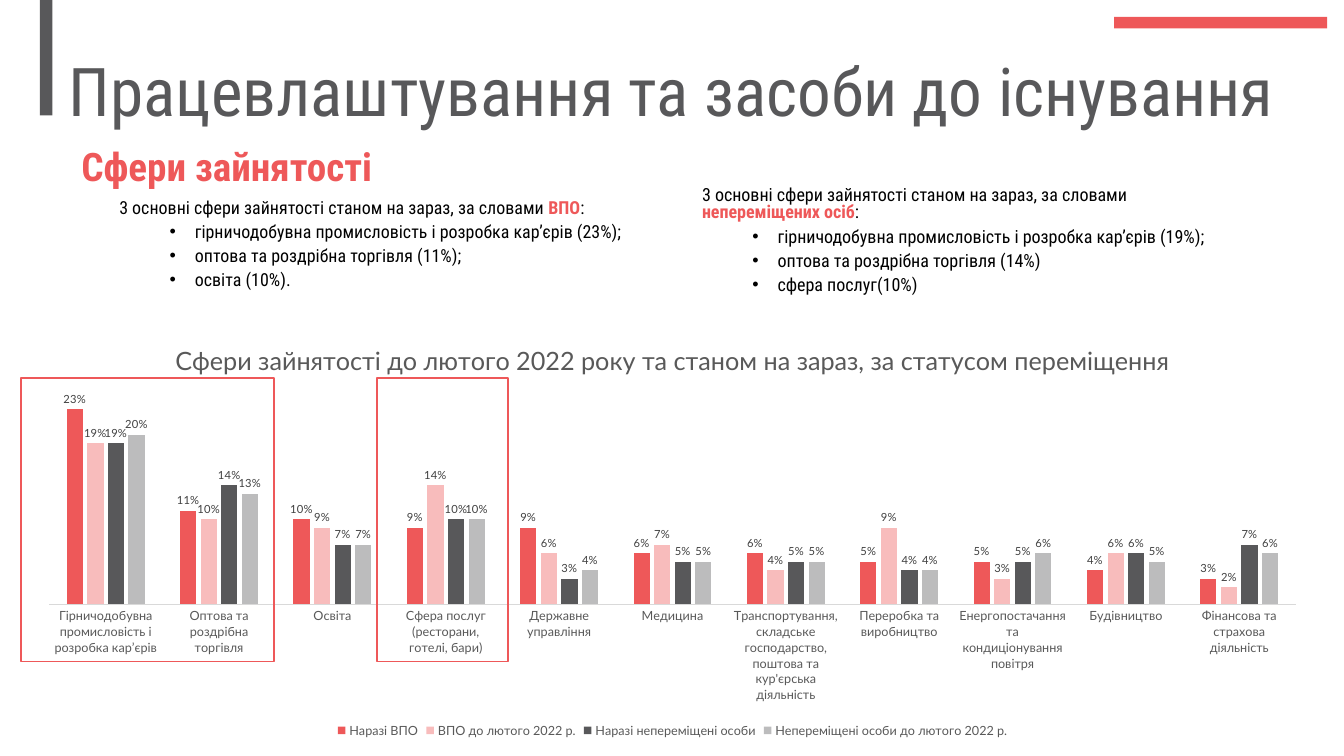
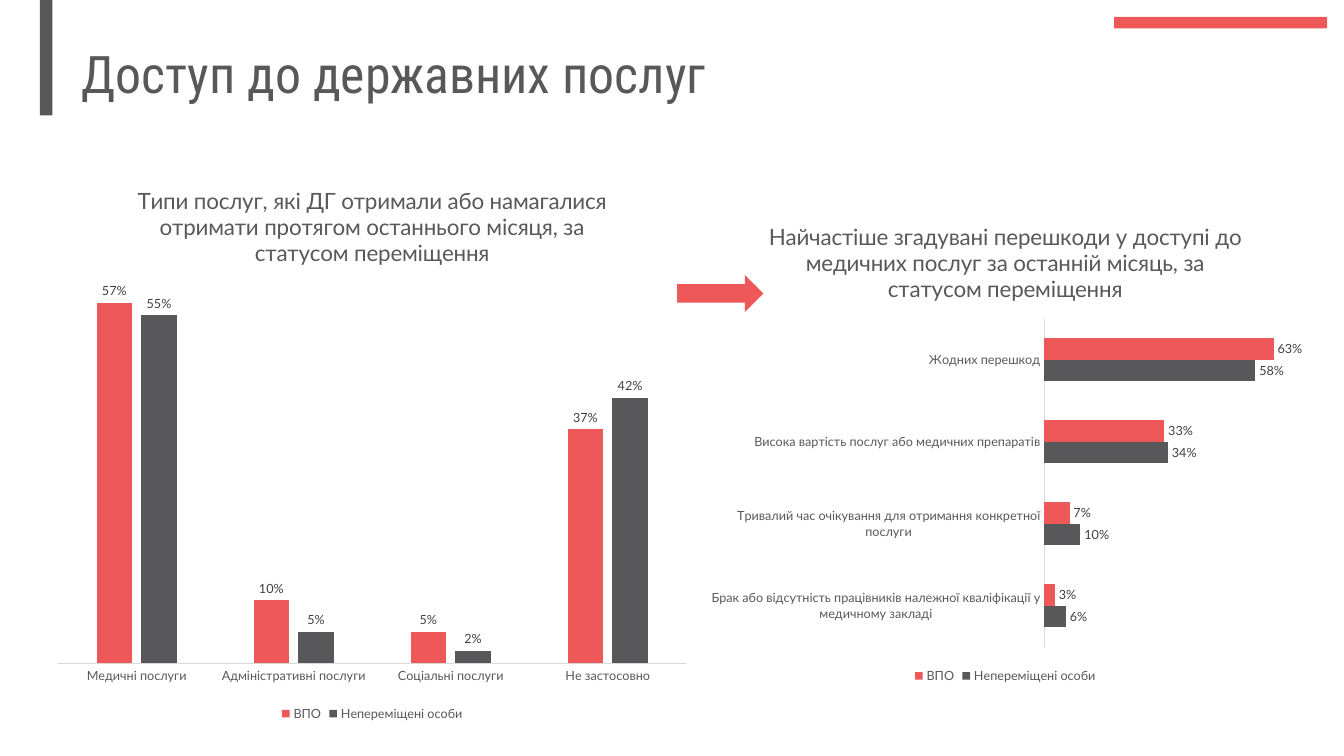
"""Builds two slides on employment and on access to public services."""
from lxml import etree
from pptx import Presentation
from pptx import util as u
from pptx.chart.data import CategoryChartData
from pptx.dml.color import RGBColor
from pptx.enum import chart as ch, shapes, text
from pptx.oxml import ns

RED, PINK, DARK, SILVER = "EE5859", "F8BCBC", "58585A", "BCBCBD"
BLACK, GREY, LABEL, RULE = "000000", "595959", "404040", "D9D9D9"
HEAD, CHART = "Roboto Condensed", "Lato"
COLUMN, BAR = ch.XL_CHART_TYPE.COLUMN_CLUSTERED, ch.XL_CHART_TYPE.BAR_CLUSTERED
rgb = RGBColor.from_string


def px(*lengths):
    """Turn pixels, 96 to the inch, into EMU."""
    return [u.Emu(n * 9525) for n in lengths]


def style(font, name, size, color, bold=False):
    """Set the face, size, colour and weight of a font."""
    font.name, font.size, font.bold = name, u.Pt(size), bold
    font.color.rgb = rgb(color)


prs = Presentation()
prs.slide_width, prs.slide_height = px(1280, 720)
jobs = prs.slides.add_slide(prs.slide_layouts[3])
services = prs.slides.add_slide(prs.slide_layouts[5])

bands = [((1061, 16, 203, 11), RED), ((38, 0, 12, 110), DARK)]
for i, (box, color) in enumerate(bands):
    sp = jobs.shapes.add_shape(shapes.MSO_SHAPE.RECTANGLE, *px(*box))
    sp.shadow.inherit = False
    sp.fill.solid()
    sp.fill.fore_color.rgb = rgb(color)
    sp.line.fill.background()
    sp.element.nvSpPr.cNvPr.id = 20 + i
    prs.slide_master.shapes.element.append(sp.element)

titles = [
    (jobs, (56, 58, 1205, 64), "Працевлаштування та засоби до існування", 48),
    (services, (68, 41, 815, 64), "Доступ до державних послуг", 37),
]
for s, box, words, size in titles:
    sp = s.shapes.title
    sp.left, sp.top, sp.width, sp.height = px(*box)
    tf = sp.text_frame
    tf.auto_size = text.MSO_AUTO_SIZE.NONE
    tf.vertical_anchor = text.MSO_ANCHOR.MIDDLE
    p = tf.paragraphs[0]
    p.alignment, p.line_spacing = text.PP_ALIGN.LEFT, 0.9
    r = p.add_run()
    r.text = words
    style(r.font, HEAD, size, DARK)

tf = jobs.shapes.add_textbox(*px(68, 131, 1165, 55)).text_frame
tf.word_wrap = True
r = tf.paragraphs[0].add_run()
r.text = "Сфери зайнятості"
style(r.font, HEAD, 28, RED, True)

lists = [
    ((104, 186, 537, 123), 12.8, "ВПО", [
        "гірничодобувна промисловість і розробка кар’єрів (23%);",
        "оптова та роздрібна торгівля (11%);",
        "освіта (10%).",
    ]),
    ((659, 174, 537, 134), 12.9, "непереміщених осіб", [
        "гірничодобувна промисловість і розробка кар’єрів (19%);",
        "оптова та роздрібна торгівля (14%)",
        "сфера послуг(10%)",
    ]),
]
for sp, (box, size, group, items) in zip(list(jobs.placeholders)[1:], lists):
    sp.left, sp.top, sp.width, sp.height = px(*box)
    tf = sp.text_frame
    tf.auto_size = text.MSO_AUTO_SIZE.NONE
    intro = [("3 основні сфери зайнятості станом на зараз, за словами ", BLACK),
             (group, RED), (":", BLACK)]
    for i, runs in enumerate([intro] + [[(item, BLACK)] for item in items]):
        p = tf.add_paragraph() if i else tf.paragraphs[0]
        p.level = 1 if i else 0
        p.line_spacing, p.space_before = 0.8, u.Pt(5 if i else 10)
        pPr = p._p.get_or_add_pPr()
        margin, indent = px(72, -24) if i else (0, 0)
        pPr.set("marL", str(margin))
        pPr.set("indent", str(indent))
        bullet = etree.SubElement(pPr, ns.qn("a:buChar" if i else "a:buNone"))
        if i:
            bullet.set("char", "•")
        for words, color in runs:
            r = p.add_run()
            r.text = words
            style(r.font, HEAD, size, color, color == RED)

sp = services.shapes.add_shape(shapes.MSO_SHAPE.RIGHT_ARROW, *px(645, 262, 82, 35))
sp.shadow.inherit = False
sp.fill.solid()
sp.fill.fore_color.rgb = rgb(RED)
sp.line.fill.background()

charts = [
    (jobs, COLUMN, (22, 309, 1237, 398), 18, 8, 219, -27,
     "Сфери зайнятості до лютого 2022 року та станом на зараз, за статусом переміщення",
     ["Гірничодобувна промисловість і розробка кар’єрів",
      "Оптова та роздрібна торгівля", "Освіта",
      "Сфера послуг (ресторани, готелі, бари)", "Державне управління", "Медицина",
      "Транспортування, складське господарство, поштова та кур'єрська діяльність",
      "Переробка та виробництво", "Енергопостачання та кондиціонування повітря",
      "Будівництво", "Фінансова та страхова діяльність"],
     [("Наразі ВПО", RED, (23, 11, 10, 9, 9, 6, 6, 5, 5, 4, 3)),
      ("ВПО до лютого 2022 р.", PINK, (19, 10, 9, 14, 6, 7, 4, 9, 3, 6, 2)),
      ("Наразі непереміщені особи", DARK, (19, 14, 7, 10, 3, 5, 5, 4, 5, 6, 7)),
      ("Непереміщені особи до лютого 2022 р.", SILVER,
       (20, 13, 7, 10, 4, 5, 5, 4, 6, 5, 6))]),
    (services, BAR, (666, 192, 583, 463), 16, 9, 182, 0,
     "Найчастіше згадувані перешкоди у доступі до медичних послуг "
     "за останній місяць, за статусом переміщення",
     ["Брак або відсутність працівників належної кваліфікації у медичному закладі",
      "Тривалий час очікування для отримання конкретної послуги",
      "Висока вартість послуг або медичних препаратів", "Жодних перешкод"],
     [("Непереміщені особи", DARK, (6, 10, 34, 58)),
      ("ВПО", RED, (3, 7, 33, 63))]),
    (services, COLUMN, (43, 156, 623, 535), 16, 9, 219, -27,
     "Типи послуг, які ДГ отримали або намагалися отримати "
     "протягом останнього місяця, за статусом переміщення",
     ["Медичні послуги", "Адміністративні послуги", "Соціальні послуги",
      "Не застосовно"],
     [("ВПО", RED, (57, 10, 5, 37)),
      ("Непереміщені особи", DARK, (55, 5, 2, 42))]),
]
for s, kind, box, size, label_size, gap, overlap, title, cats, rows in charts:
    data = CategoryChartData(number_format="0%")
    data.categories = cats
    for name, color, percents in rows:
        data.add_series(name, [n / 100 for n in percents])
    chart = s.shapes.add_chart(kind, *px(*box), data).chart
    style(chart.font, CHART, 10, BLACK)
    r = chart.chart_title.text_frame.paragraphs[0].add_run()
    r.text = title
    style(r.font, CHART, size, GREY)
    chart.has_legend = True
    chart.legend.position = ch.XL_LEGEND_POSITION.BOTTOM
    chart.legend.include_in_layout = False
    style(chart.legend.font, CHART, 9, GREY)
    chart.value_axis.visible = False
    chart.value_axis.has_major_gridlines = False
    axis = chart.category_axis
    axis.major_tick_mark = ch.XL_TICK_MARK.NONE
    axis.format.line.color.rgb = rgb(RULE)
    axis.format.line.width = u.Pt(0.75)
    style(axis.tick_labels.font, CHART, 9, GREY)
    plot = chart.plots[0]
    plot.gap_width, plot.overlap, plot.vary_by_categories = gap, overlap, False
    for series, (name, color, percents) in zip(plot.series, rows):
        series.format.fill.solid()
        series.format.fill.fore_color.rgb = rgb(color)
        labels = series.data_labels
        labels.show_value = True
        labels.number_format, labels.number_format_is_linked = "0%", False
        labels.position = ch.XL_LABEL_POSITION.OUTSIDE_END
        style(labels.font, CHART, label_size, LABEL)

for left, width in [(20, 241), (359, 125)]:
    sp = jobs.shapes.add_shape(shapes.MSO_SHAPE.RECTANGLE, *px(left, 360, width, 270))
    sp.shadow.inherit = False
    sp.fill.background()
    sp.line.color.rgb = rgb(RED)
    sp.line.width = u.Pt(1)

prs.save("out.pptx")
